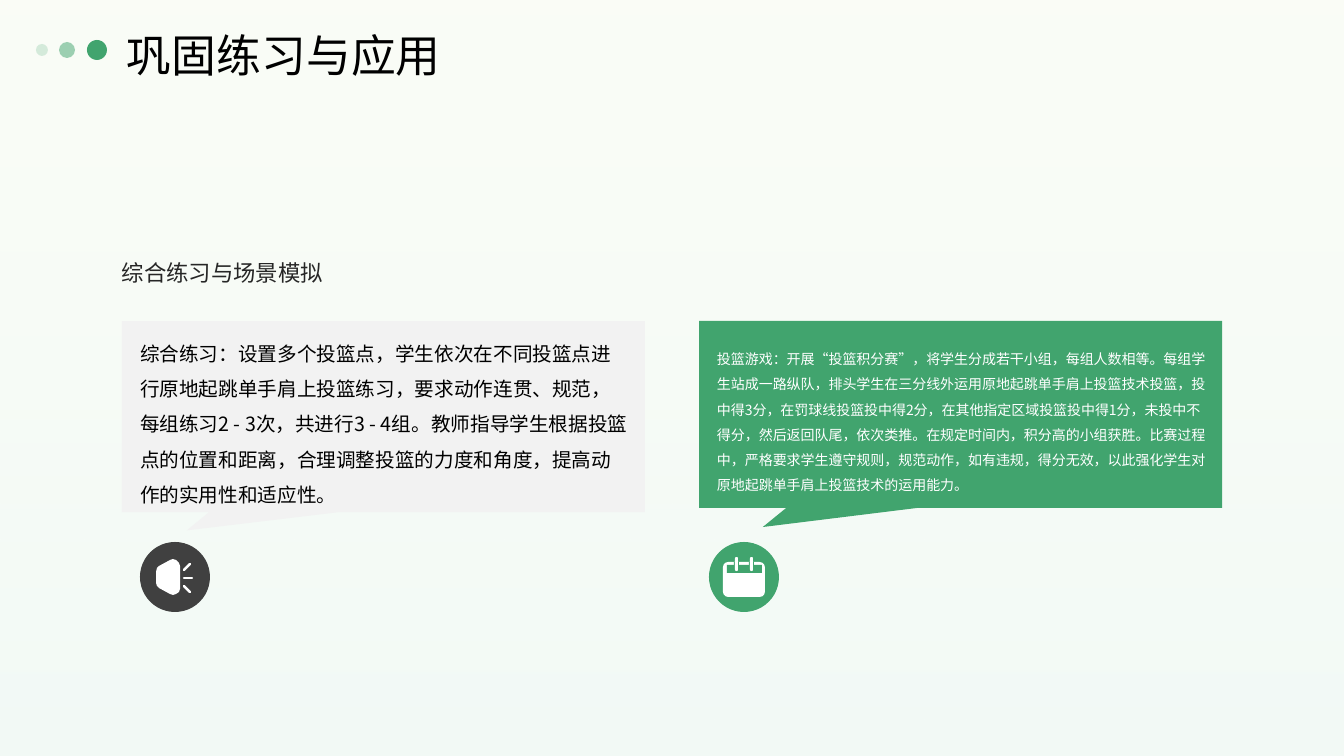
from lxml import etree
from pptx import Presentation
from pptx.dml.color import RGBColor
from pptx.enum.shapes import MSO_CONNECTOR, MSO_SHAPE
from pptx.enum.text import MSO_ANCHOR
from pptx.oxml.ns import qn
from pptx.util import Pt

PX = 12192000 / 1344
RECT, OVAL, ROUND = MSO_SHAPE.RECTANGLE, MSO_SHAPE.OVAL, MSO_SHAPE.ROUNDED_RECTANGLE
CALLOUT, LINE = MSO_SHAPE.RECTANGULAR_CALLOUT, MSO_CONNECTOR.STRAIGHT
MIDDLE, BOTTOM = MSO_ANCHOR.MIDDLE, MSO_ANCHOR.BOTTOM
THEME = dict(
    font="Noto Sans CJK SC",
    green="41A46E", gray="F2F2F2", dark="404040", ink="262626",
    black="000000", white="FFFFFF", mint="D7EFE2", lime="E9F5DA",
    title=32, heading=16, practice=14, game=10,
)

prs = Presentation()
prs.slide_width, prs.slide_height = round(1344 * PX), round(756 * PX)
slide = prs.slides.add_slide(prs.slide_layouts[6])
shapes = slide.shapes


def add_shape(kind, box, color, adjustments=(), alpha=100):
    s = shapes.add_shape(kind, *[round(v * PX) for v in box])
    s.shadow.inherit = False
    s.line.fill.background()
    s.fill.solid()
    s.fill.fore_color.rgb = RGBColor.from_string(THEME[color])
    for i, value in enumerate(adjustments):
        s.adjustments[i] = value
    if alpha < 100:
        rgb = s.fill._xPr.find(qn("a:solidFill"))[0]
        etree.SubElement(rgb, qn("a:alpha"), val=str(alpha * 1000))
    return s


def add_text(box, text, size, color, anchor=MIDDLE, spacing=1.5):
    tf = shapes.add_textbox(*[round(v * PX) for v in box]).text_frame
    tf.word_wrap = True
    tf.vertical_anchor = anchor
    tf.margin_left = tf.margin_right = tf.margin_top = tf.margin_bottom = 0
    p = tf.paragraphs[0]
    p.text = text
    p.line_spacing = spacing
    p.font.size = Pt(THEME[size])
    p.font.name = THEME["font"]
    p.font.color.rgb = RGBColor.from_string(THEME[color])
    etree.SubElement(p.font._element, qn("a:ea"), typeface=THEME["font"])


# Background wash
wash = add_shape(RECT, (0, 0, 1344, 756), "white")
wash.fill.gradient()
wash.fill.gradient_angle = 90
for stop, color, alpha in zip(wash.fill.gradient_stops, ("mint", "lime"), (31, 22)):
    stop.color.rgb = RGBColor.from_string(THEME[color])
for rgb, alpha in zip(wash.fill._xPr.iter(qn("a:srgbClr")), (31, 22)):
    etree.SubElement(rgb, qn("a:alpha"), val=str(alpha * 1000))

# Title and heading
for x, y, d, alpha in ((36, 44, 12, 20), (59, 42, 16, 50), (87, 40, 20, 100)):
    add_shape(OVAL, (x, y, d, d), "green", alpha=alpha)
add_text((127, 26, 1199, 47), "巩固练习与应用", "title", "black", spacing=1.2)
add_text((122, 153, 1101, 133), "综合练习与场景模拟", "heading", "ink", BOTTOM)

# Callout cards with their round badges
CARDS = (
    (122, 191, "gray", (-0.376, 0.596), 140, "dark", "practice", "black",
     "综合练习：设置多个投篮点，学生依次在不同投篮点进行原地起跳单手肩上投篮练习，"
     "要求动作连贯、规范，每组练习2 - 3次，共进行3 - 4组。教师指导学生根据投篮点的位置和距离，"
     "合理调整投篮的力度和角度，提高动作的实用性和适应性。"),
    (699, 187, "green", (-0.378, 0.602), 709, "green", "game", "white",
     "投篮游戏：开展“投篮积分赛”，将学生分成若干小组，每组人数相等。每组学生站成一路纵队，"
     "排头学生在三分线外运用原地起跳单手肩上投篮技术投篮，投中得3分，在罚球线投篮投中得2分，"
     "在其他指定区域投篮投中得1分，未投中不得分，然后返回队尾，依次类推。在规定时间内，"
     "积分高的小组获胜。比赛过程中，严格要求学生遵守规则，规范动作，如有违规，得分无效，"
     "以此强化学生对原地起跳单手肩上投篮技术的运用能力。"),
)
for x, height, fill, tail, badge_x, badge, size, color, text in CARDS:
    add_shape(CALLOUT, (x, 321, 523, height), fill, tail)
    add_text((x + 18, 341, 488, 154), text, size, color)
    add_shape(ROUND, (badge_x, 542, 70, 70), badge, (0.5,))

# Megaphone icon
HORN = ((156, 572), (157, 568), (159, 566), (170, 560), (173, 559), (176, 560),
        (179, 563), (180, 566), (180, 589), (179, 592), (176, 594), (173, 595),
        (170, 594), (159, 588), (157, 586), (156, 583))
builder = shapes.build_freeform(*HORN[0], scale=PX)
builder.add_line_segments(HORN[1:])
horn = builder.convert_to_shape()
horn.shadow.inherit = False
horn.fill.solid()
horn.fill.fore_color.rgb = RGBColor.from_string(THEME["white"])
horn.line.fill.background()
for ray in ((184, 570, 190, 564), (184, 578, 192, 578), (184, 586, 190, 592)):
    c = shapes.add_connector(LINE, *[round(v * PX) for v in ray])
    c.line.width = Pt(1.75)
    c.line.color.rgb = RGBColor.from_string(THEME["white"])
    c.line._ln.set("cap", "rnd")
    etree.SubElement(c._element.spPr, qn("a:effectLst"))

# Calendar icon
add_shape(ROUND, (723, 562, 42, 35), "white", (0.15,))
add_shape(RECT, (727, 565, 35, 8), "green")
for x in (735, 750):
    add_shape(RECT, (x - 1, 562, 5, 3), "green")
    add_shape(ROUND, (x, 557, 3, 14), "white", (0.5,))

prs.save("out.pptx")
